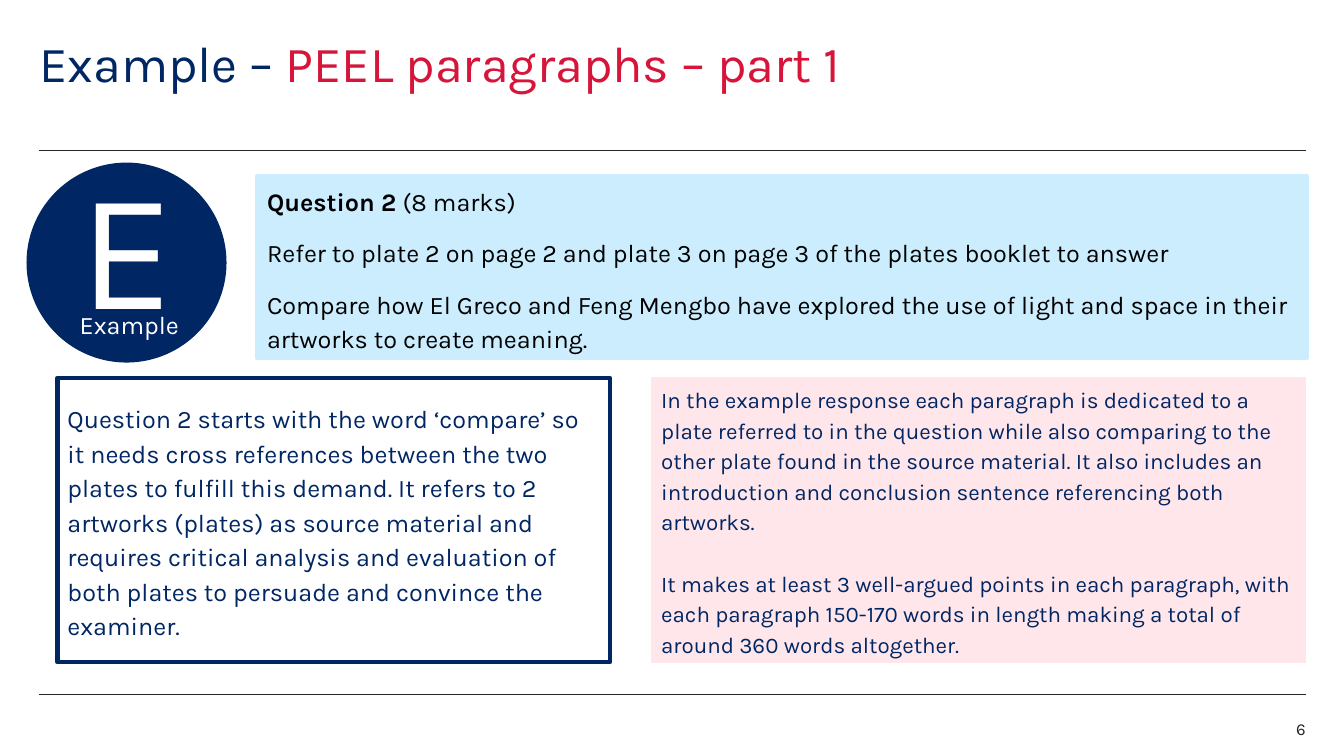
from dataclasses import dataclass

from lxml.etree import SubElement
from pptx import Presentation
from pptx.dml.color import RGBColor
from pptx.enum.shapes import MSO_CONNECTOR, MSO_SHAPE
from pptx.enum.text import MSO_ANCHOR as Anchor, MSO_AUTO_SIZE, PP_ALIGN as Align
from pptx.oxml.ns import qn
from pptx.util import Emu, Pt

PX = 9144  # 100 px to the inch
FONT = "Karla"
NAVY = RGBColor(0x00, 0x26, 0x64)
RED = RGBColor(0xD7, 0x15, 0x3A)
INK = RGBColor(0x22, 0x27, 0x2B)
BLACK = RGBColor(0, 0, 0)
WHITE = RGBColor(0xFF, 0xFF, 0xFF)
SKY = RGBColor(0xCB, 0xED, 0xFD)
ROSE = RGBColor(0xFF, 0xE6, 0xEA)

Box = tuple[int, int, int, int]


@dataclass
class Run:
    text: str
    color: RGBColor
    size: int
    bold: bool = False


@dataclass
class Panel:
    box: Box
    fill: RGBColor
    line: RGBColor
    weight: int
    paragraphs: list[list[Run]]
    kind: MSO_SHAPE = MSO_SHAPE.RECTANGLE
    anchor: Anchor = Anchor.MIDDLE
    align: Align = Align.LEFT
    spacing: float = 1.14
    gap: int = 0


def px(n: int) -> Emu:
    return Emu(n * PX)


def write(tf, paragraphs: list[list[Run]], align: Align = Align.LEFT,
          spacing: float = 1.0, gap: int = 0) -> None:
    for i, runs in enumerate(paragraphs):
        p = tf.paragraphs[0] if i == 0 else tf.add_paragraph()
        p.alignment = align
        p.line_spacing = spacing
        p.space_before = Pt(gap if i else 0)
        for run in runs:
            r = p.add_run()
            r.text = run.text
            r.font.name = FONT
            r.font.size = Pt(run.size)
            r.font.bold = run.bold
            r.font.color.rgb = run.color


def set_frame(tf, anchor: Anchor = Anchor.TOP) -> None:
    tf.word_wrap = True
    tf.auto_size = MSO_AUTO_SIZE.NONE
    tf.vertical_anchor = anchor
    tf.margin_left = tf.margin_right = tf.margin_top = tf.margin_bottom = 0


def add_panel(s, panel: Panel):
    sp = s.shapes.add_shape(panel.kind, *map(px, panel.box))
    sp.shadow.inherit = False
    sp.fill.solid()
    sp.fill.fore_color.rgb = panel.fill
    sp.line.color.rgb = panel.line
    sp.line.width = Pt(panel.weight)
    sp.text_frame.word_wrap = True
    sp.text_frame.vertical_anchor = panel.anchor
    write(sp.text_frame, panel.paragraphs, panel.align, panel.spacing, panel.gap)
    return sp


def add_label(s, box: Box, run: Run, align: Align = Align.LEFT):
    sp = s.shapes.add_textbox(*map(px, box))
    set_frame(sp.text_frame)
    write(sp.text_frame, [[run]], align)
    return sp


def add_rule(s, y: int) -> None:
    line = s.shapes.add_connector(MSO_CONNECTOR.STRAIGHT, px(39), px(y), px(1295), px(y))
    line.line.color.rgb = INK
    line.line.width = Pt(0.5)
    SubElement(line._element.spPr, qn("a:effectLst"))


BADGE = Panel((27, 162, 197, 197), NAVY, NAVY, 1, [[Run("E", WHITE, 120)]],
              kind=MSO_SHAPE.OVAL, align=Align.CENTER, spacing=1.0)

PANELS = [
    Panel((255, 175, 1041, 180), SKY, SKY, 3, [
        [Run("Question 2", BLACK, 18, True), Run(" (8 marks)", BLACK, 18)],
        [Run("Refer to plate 2 on page 2 and plate 3 on page 3 of the plates "
             "booklet to answer", BLACK, 18)],
        [Run("Compare how El Greco and Feng Mengbo have explored the use of light "
             "and space in their artworks to create meaning.", BLACK, 18)],
    ], anchor=Anchor.TOP, spacing=1.15, gap=12),
    Panel((57, 375, 548, 282), WHITE, NAVY, 3, [
        [Run("Question 2 starts with the word ‘compare’ so it needs cross references "
             "between the two plates to fulfill this demand. It refers to 2 artworks "
             "(plates) as source material and requires critical analysis and evaluation "
             "of both plates to persuade and convince the examiner.", NAVY, 18)],
    ]),
    Panel((646, 375, 649, 282), ROSE, ROSE, 1, [
        [Run("In the example response each paragraph is dedicated to a plate referred to "
             "in the question while also comparing to the other plate found in the source "
             "material. It also includes an introduction and conclusion sentence "
             "referencing both artworks.", NAVY, 16)],
        [Run("It makes at least 3 well-argued points in each paragraph, with each "
             "paragraph 150-170 words in length making a total of around 360 words "
             "altogether.", NAVY, 16)],
    ], gap=22),
]


def main() -> None:
    prs = Presentation()
    prs.slide_width, prs.slide_height = px(1333), px(750)
    s = prs.slides.add_slide(prs.slide_layouts[5])

    # Title between the frame rules
    add_rule(s, 149)
    add_rule(s, 689)
    title = s.shapes.title
    title.left, title.top, title.width, title.height = map(px, (39, 39, 1102, 110))
    set_frame(title.text_frame)
    write(title.text_frame, [[Run("Example – ", NAVY, 36),
                              Run("PEEL paragraphs – part 1", RED, 36)]], spacing=0.9)

    # Round badge, its letter raised to leave room for the label
    badge = add_panel(s, BADGE)
    badge.text_frame.margin_bottom = px(45)
    label = add_label(s, (79, 307, 113, 48), Run("Example", WHITE, 18))
    s.shapes.add_group_shape([badge, label])

    # Question and advice panels
    for panel in PANELS:
        add_panel(s, panel)

    # Page number
    add_label(s, (1216, 713, 79, 20), Run("6", INK, 12), Align.RIGHT)

    prs.save("out.pptx")


if __name__ == "__main__":
    main()
